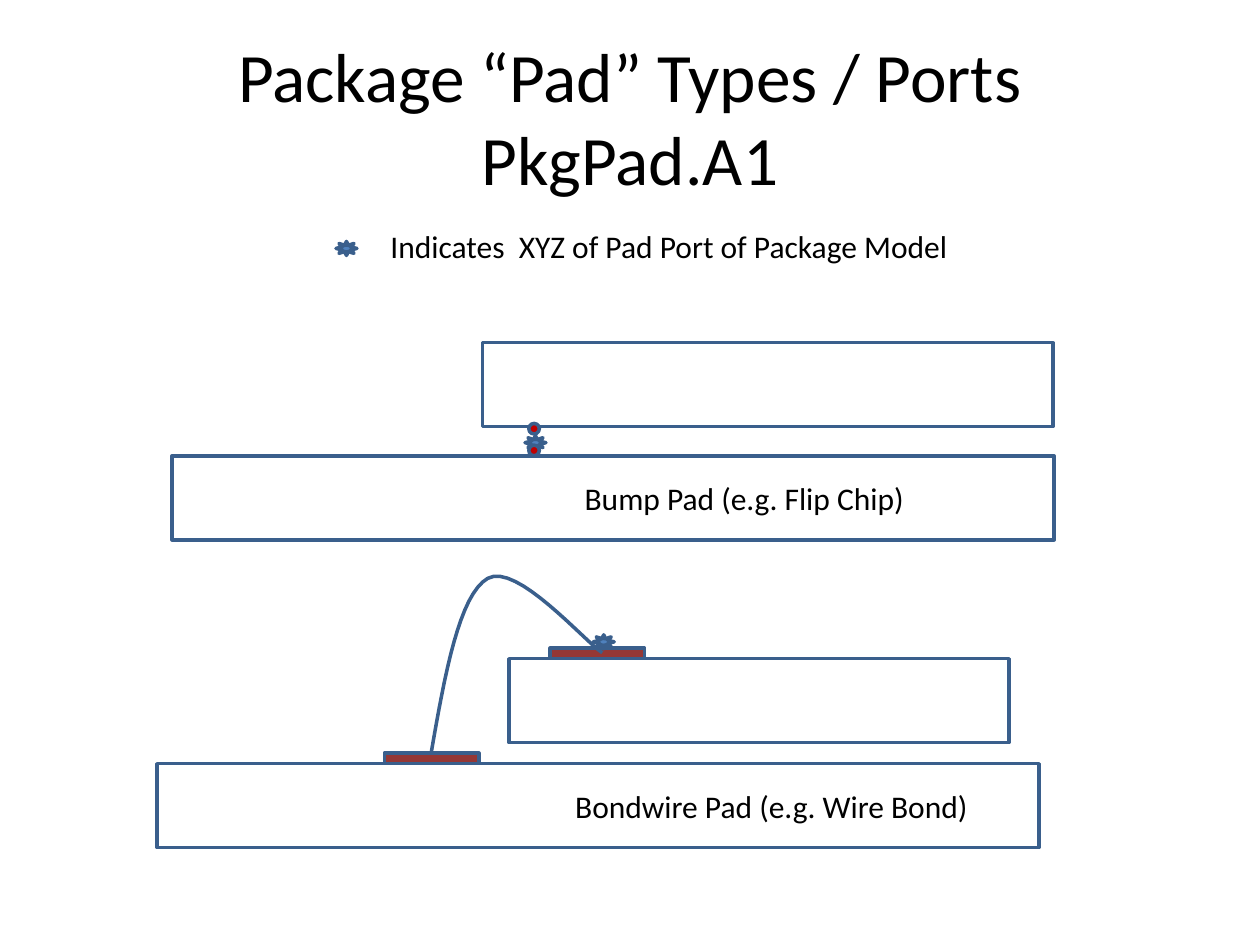
from dataclasses import dataclass
from typing import Optional

import pptx
import pptx.dml.color
import pptx.enum.shapes
import pptx.enum.text
import pptx.util

Pt = pptx.util.Pt
RGB = pptx.dml.color.RGBColor
SHAPE = pptx.enum.shapes.MSO_SHAPE
ALIGN = pptx.enum.text.PP_ALIGN
ANCHOR = pptx.enum.text.MSO_ANCHOR
FIT = pptx.enum.text.MSO_AUTO_SIZE


@dataclass(frozen=True)
class Theme:
    font: str = "Calibri"
    title_size: float = 39.6
    label_size: float = 18
    line_width: float = 2
    text: RGB = RGB(0x00, 0x00, 0x00)
    outline: RGB = RGB(0x3A, 0x5F, 0x8C)
    port: RGB = RGB(0x4F, 0x81, 0xBD)
    bump: RGB = RGB(0xC0, 0x00, 0x00)
    pad: RGB = RGB(0x95, 0x37, 0x35)


THEME = Theme()


@dataclass(frozen=True)
class Kind:
    """Geometry, size and fill shared by every part of one kind."""
    preset: SHAPE
    width: float
    height: float
    fill: Optional[RGB] = None


SUBSTRATE = Kind(SHAPE.RECTANGLE, 504, 48)
FLIP_DIE = Kind(SHAPE.RECTANGLE, 325.8, 48)
WIRE_DIE = Kind(SHAPE.RECTANGLE, 285.6, 48)
BOND_PAD = Kind(SHAPE.RECTANGLE, 54, 6, THEME.pad)
BUMP = Kind(SHAPE.OVAL, 6, 6, THEME.bump)
PORT = Kind(SHAPE.SUN, 12, 8, THEME.port)


@dataclass(frozen=True)
class Part:
    kind: Kind
    left: float
    top: float


@dataclass(frozen=True)
class Label:
    text: str
    left: float
    top: float
    width: float
    height: float = 29
    size: float = THEME.label_size
    is_title: bool = False


PARTS = [
    Part(FLIP_DIE, 275.8, 195.8),
    Part(WIRE_DIE, 290.9, 376.4),
    Part(BUMP, 302.2, 242),
    Part(BOND_PAD, 314.4, 370.4),
    Part(PORT, 300, 249),
    Part(PORT, 192, 138),
    Part(SUBSTRATE, 98.4, 260.5),
    Part(BUMP, 302.2, 254.4),
    Part(SUBSTRATE, 89.8, 436.4),
    Part(BOND_PAD, 219.6, 430.4),
    Part(PORT, 339, 362.8),
]

LABELS = [
    Label("Package “Pad” Types / Ports\vPkgPad.A1", 36, 21.6, 648, 90,
          THEME.title_size, True),
    Label("Indicates  XYZ of Pad Port of Package Model", 216, 126.2, 336),
    Label("Bump Pad (e.g. Flip Chip)", 327, 270, 199.4),
    Label("Bondwire Pad (e.g. Wire Bond)", 321.6, 446.4, 242),
]

BONDWIRE = [
    ((246.4, 430.4), (254.3, 385), (262.5, 339.8), (278.8, 330.5)),
    ((278.8, 330.5), (295.1, 321.2), (334.1, 366.5), (344.2, 373)),
]
CURVE_STEPS = 16


def set_all(target: object, values: dict) -> None:
    for name, value in values.items():
        setattr(target, name, value)


def style(sp, fill: Optional[RGB]) -> None:
    sp.shadow.inherit = False
    if fill is None:
        sp.fill.background()
    else:
        sp.fill.solid()
        sp.fill.fore_color.rgb = fill
    sp.line.color.rgb = THEME.outline
    sp.line.width = Pt(THEME.line_width)


def draw_part(s, part: Part) -> None:
    kind = part.kind
    sp = s.shapes.add_shape(kind.preset, Pt(part.left), Pt(part.top),
                            Pt(kind.width), Pt(kind.height))
    style(sp, kind.fill)


def draw_label(s, label: Label) -> None:
    box = s.shapes.add_textbox(Pt(label.left), Pt(label.top),
                               Pt(label.width), Pt(label.height))
    tf = box.text_frame
    set_all(tf, {
        "word_wrap": label.is_title,
        "auto_size": FIT.NONE if label.is_title else FIT.SHAPE_TO_FIT_TEXT,
        "vertical_anchor": ANCHOR.MIDDLE if label.is_title else ANCHOR.TOP,
    })
    p = tf.paragraphs[0]
    p.text = label.text
    p.alignment = ALIGN.CENTER if label.is_title else ALIGN.LEFT
    for r in p.runs:
        set_all(r.font, {"name": THEME.font, "size": Pt(label.size)})
        r.font.color.rgb = THEME.text


def bezier_point(curve: tuple, t: float) -> tuple[int, int]:
    weights = ((1 - t) ** 3, 3 * t * (1 - t) ** 2, 3 * t ** 2 * (1 - t), t ** 3)
    x, y = (sum(w * c for w, c in zip(weights, axis)) for axis in zip(*curve))
    return Pt(x), Pt(y)


def draw_bondwire(s) -> None:
    points = [bezier_point(curve, i / CURVE_STEPS)
              for curve in BONDWIRE for i in range(1, CURVE_STEPS + 1)]
    start = bezier_point(BONDWIRE[0], 0)
    builder = s.shapes.build_freeform(*start)
    builder.add_line_segments(points, close=False)
    style(builder.convert_to_shape(), None)


def main() -> None:
    prs = pptx.Presentation()
    set_all(prs, {"slide_width": Pt(720), "slide_height": Pt(540)})
    s = prs.slides.add_slide(prs.slide_layouts[6])
    for part in PARTS:
        draw_part(s, part)
    draw_bondwire(s)
    for label in LABELS:
        draw_label(s, label)
    prs.save("out.pptx")


if __name__ == "__main__":
    main()
